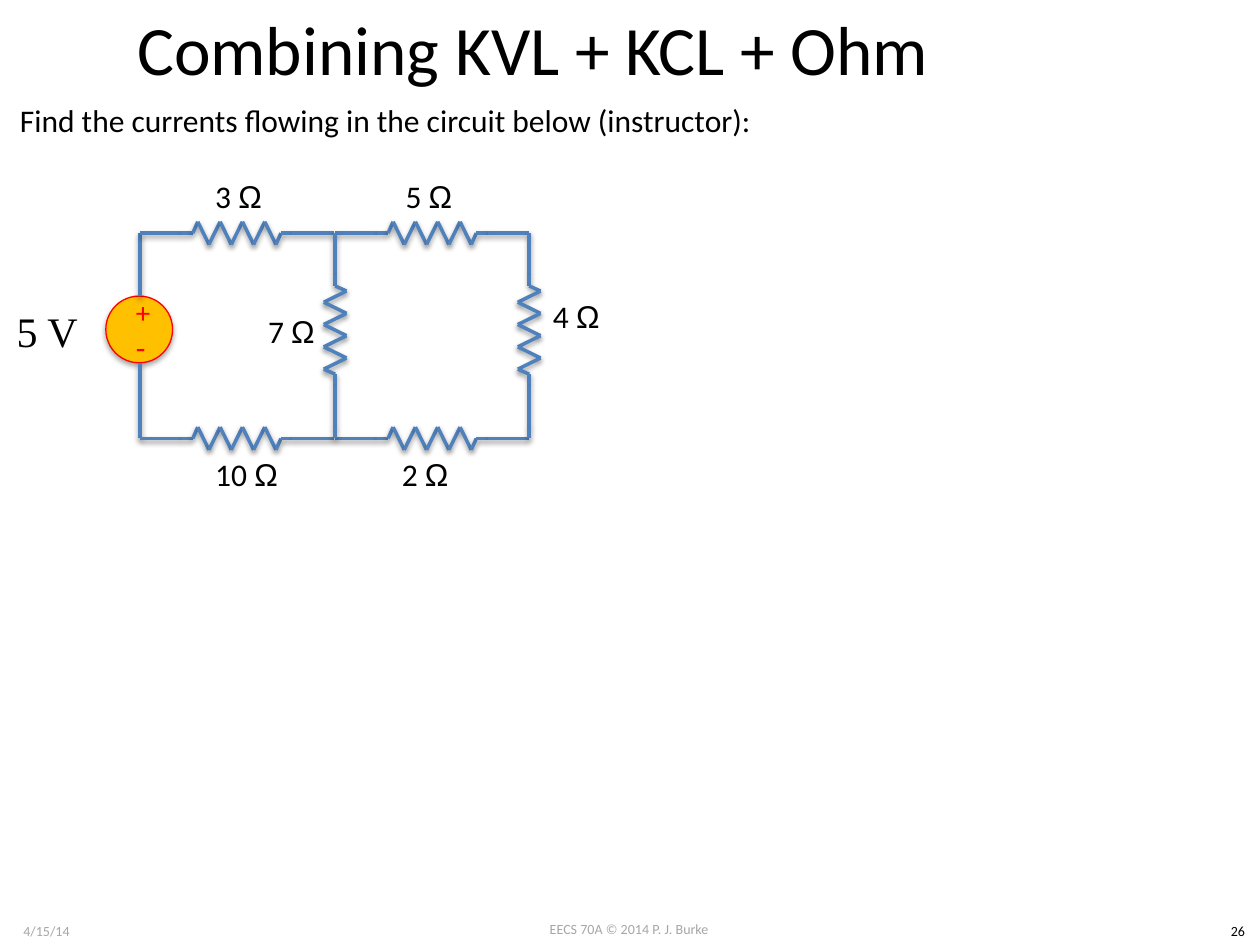
from lxml import etree
from pptx import Presentation
from pptx.dml.color import RGBColor
from pptx.enum.shapes import MSO_CONNECTOR as CONNECTOR, MSO_SHAPE as SHAPE
from pptx.enum.text import MSO_ANCHOR as ANCHOR, MSO_AUTO_SIZE as AUTO, PP_ALIGN as ALIGN
from pptx.oxml.ns import qn
from pptx.util import Inches, Pt

rgb = RGBColor.from_string
BLACK, RED, GREY, BLUE = "000000", "FF0000", "A6A6A6", "4F81BD"


def add_text(parent, box, runs, size, color=BLACK, align=ALIGN.CENTER,
             anchor=ANCHOR.MIDDLE, wrap=True, grow=False):
    label = parent.add_textbox(*map(Inches, box))
    frame = label.text_frame
    frame.word_wrap = wrap
    frame.auto_size = AUTO.SHAPE_TO_FIT_TEXT if grow else AUTO.NONE
    frame.vertical_anchor = anchor
    paragraph = frame.paragraphs[0]
    paragraph.alignment = align
    for text, font in runs:
        run = paragraph.add_run()
        run.text = text
        run.font.name = font
        run.font.size = Pt(size)
        run.font.color.rgb = rgb(color)


def add_shadow(part, distance, opacity):
    effects = etree.SubElement(part._element.spPr, qn("a:effectLst"))
    shadow = etree.SubElement(effects, qn("a:outerShdw"), blurRad=str(Pt(3.1)),
                              dist=str(Pt(distance)), dir="5400000", rotWithShape="0")
    shade = etree.SubElement(shadow, qn("a:srgbClr"), val=BLACK)
    etree.SubElement(shade, qn("a:alpha"), val=str(opacity * 1000))


prs = Presentation()
prs.slide_width, prs.slide_height = Inches(10), Inches(7.5)
slide = prs.slides.add_slide(prs.slide_layouts[6])
shapes = slide.shapes

footers = [
    ((3.83, 7.26, 2.33, 0.24), "EECS 70A © 2014 P. J. Burke", GREY),
    ((0, 7.27, 0.74, 0.24), "4/15/14", GREY),
    ((9.65, 7.27, 0.35, 0.24), "26", BLACK),
]
for box, text, color in footers:
    add_text(shapes, box, [(text, "Calibri")], 8, color, anchor=ANCHOR.TOP, grow=True)

add_text(shapes, (0.83, 0, 6.8, 0.75), [("Combining KVL + KCL + Ohm", "Calibri")], 39.6)
add_text(shapes, (0.06, 0.75, 6.08, 0.4),
         [("Find the currents flowing in the circuit below (instructor):", "Calibri")],
         18, align=ALIGN.LEFT, anchor=ANCHOR.TOP, wrap=False, grow=True)
add_text(shapes, (-0.22, 2.26, 1.19, 0.73), [("5 V", "Times New Roman")], 24)

left, middle, right = 1.11, 2.66, 4.2
top, bottom = 1.85, 3.48

source = shapes.add_group_shape().shapes
circle = source.add_shape(SHAPE.OVAL, Inches(0.84), Inches(2.35), Inches(0.53), Inches(0.53))
circle.fill.solid()
circle.fill.fore_color.rgb = rgb("FFC000")
circle.line.color.rgb = rgb(RED)
circle.line.width = Pt(0.75)
add_shadow(circle, 1.8, 35)
for sign, y, size in [("+", 2.31, 16.6), ("-", 2.59, 18)]:
    add_text(source, (0.98, y, 0.26, 0.33), [(sign, "Calibri")], size, RED)

paths = [(source, [(left, bottom), (left, 2.88)]), (source, [(left, 2.35), (left, top)])]

zigzag = [(0.46 + 0.62 * i / 7, 0.09 * (-1) ** (i + 1)) for i in range(8)]
resistor = [(0, 0), (0.33, 0), (0.42, 0), *zigzag, (1.12, 0), (1.21, 0), (1.54, 0)]
for x, y in [(left, top), (middle, top), (left, bottom), (middle, bottom)]:
    paths.append((shapes.add_group_shape().shapes,
                  [(x + along, y + across) for along, across in resistor]))
for x in (middle, right):
    paths.append((shapes.add_group_shape().shapes,
                  [(x - across, top + along) for along, across in resistor] + [(x, bottom)]))

for group, points in paths:
    for start, end in zip(points, points[1:]):
        wire = group.add_connector(CONNECTOR.STRAIGHT, *map(Inches, start + end))
        wire.line.color.rgb = rgb(BLUE)
        wire.line.width = Pt(2)
        add_shadow(wire, 1.6, 38)

resistances = [
    (1.61, 1.36, 0.58, "3 "), (3.12, 1.36, 0.58, "5 "), (4.29, 2.31, 0.58, "4 "),
    (3.09, 3.56, 0.58, "2 "), (2.03, 2.43, 0.58, "7 "), (1.61, 3.56, 0.71, "10 "),
]
for x, y, width, ohms in resistances:
    add_text(shapes, (x, y, width, 0.4), [(ohms, "Calibri"), ("Ω", "Arial")], 18,
             align=ALIGN.LEFT, anchor=ANCHOR.TOP, wrap=False, grow=True)

prs.save("out.pptx")
